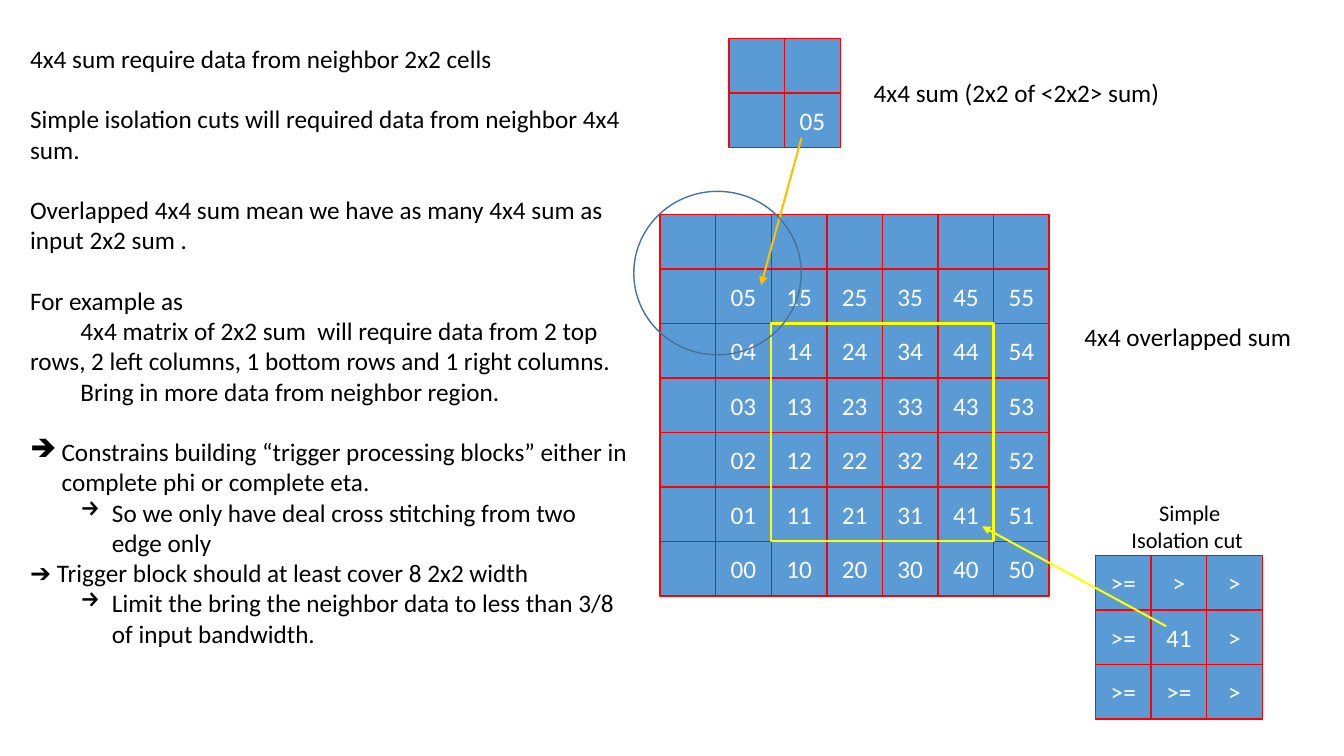
import pptx
import pptx.dml.color
import pptx.enum.shapes
import pptx.enum.text
import pptx.oxml
import pptx.oxml.ns
import pptx.util

Pt = pptx.util.Pt
MSO_SHAPE = pptx.enum.shapes.MSO_SHAPE
PP_ALIGN = pptx.enum.text.PP_ALIGN
MSO_ANCHOR = pptx.enum.text.MSO_ANCHOR

COLORS = {"cell": "5B9BD5", "grid": "FF0000", "white": "FFFFFF", "text": "000000",
          "block": "FFFF00", "sum_arrow": "FFC000", "circle": "43739E"}
FONT = "Calibri"
CELL_WIDTH, CELL_HEIGHT = 39.7, 38.93
LINE_HEIGHT = 21.6

# The overlapped grid has an empty first column and an empty top row.
overlapped_sums = [[""] * 7] + [
    [""] + [f"{column}{row}" for column in range(6)] for row in range(5, -1, -1)]
OVERLAPPED_LEFT, OVERLAPPED_TOP = 471.5, 153.2

# left, top, rows of cell texts
grids = [
    (OVERLAPPED_LEFT, OVERLAPPED_TOP, overlapped_sums),
    (520.8, 27.4, [["", ""], ["", "05"]]),
    (782.5, 396.8, [[">=", ">", ">"], [">=", "41", ">"], [">=", ">=", ">"]]),
]

# start, end, colour
arrows = [
    ((572.5, 98.6), (543.6, 203.6), "sum_arrow"),
    ((833, 447.3), (701.5, 376), "block"),
]

# left, top, width, height, size, alignment, lines
labels = [
    (617, 51.8, 221, 29, 18, PP_ALIGN.LEFT, ["4x4 sum (2x2 of <2x2> sum)"]),
    (767.5, 226.3, 164, 29, 18, PP_ALIGN.LEFT, ["4x4 overlapped sum"]),
    (800.5, 352.8, 98.6, 46, 16, PP_ALIGN.CENTER, ["Simple", "Isolation cut "]),
]

# text, gap before, level, bullet, left margin
notes = [
    ("4x4 sum require data from neighbor 2x2 cells", False, 0, None, 0),
    ("Simple isolation cuts will required data from neighbor 4x4 sum.", True, 0, None, 0),
    ("Overlapped 4x4 sum mean we have as many 4x4 sum as input 2x2 sum .",
     True, 0, None, 0),
    ("For example as", True, 0, None, 0),
    ("\t4x4 matrix of 2x2 sum  will require data from 2 top rows, 2 left columns, "
     "1 bottom rows and 1 right columns.", False, 0, None, 0),
    ("\tBring in more data from neighbor region.", False, 0, None, 0),
    ("Constrains building “trigger processing blocks” either in complete phi or "
     "complete eta.", True, 0, "➔", 22.5),
    ("So we only have deal cross stitching from two edge only", False, 1, "→", 58.5),
    ("➔ Trigger block should at least cover 8 2x2 width", False, 0, None, 0),
    ("Limit the bring the neighbor data to less than 3/8 of input bandwidth.",
     False, 1, "→", 58.5),
]


def rgb(name):
    return pptx.dml.color.RGBColor.from_string(COLORS[name])


def format_runs(paragraph, size, color):
    for run in paragraph.runs:
        run.font.name = FONT
        run.font.size = Pt(size)
        run.font.color.rgb = rgb(color)


def add_outline(slide, kind, box, line_color, line_width, fill=None):
    shape = slide.shapes.add_shape(kind, *map(Pt, box))
    shape.shadow.inherit = False
    if fill:
        shape.fill.solid()
        shape.fill.fore_color.rgb = rgb(fill)
    else:
        shape.fill.background()
    shape.line.color.rgb = rgb(line_color)
    shape.line.width = Pt(line_width)
    return shape


def add_grid(slide, left, top, rows):
    for row_index, row in enumerate(rows):
        for column_index, text in enumerate(row):
            box = (left + column_index * CELL_WIDTH, top + row_index * CELL_HEIGHT,
                   CELL_WIDTH, CELL_HEIGHT)
            cell = add_outline(slide, MSO_SHAPE.RECTANGLE, box, "grid", 1, "cell")
            if text:
                frame = cell.text_frame
                frame.text = text
                frame.vertical_anchor = MSO_ANCHOR.MIDDLE
                frame.paragraphs[0].alignment = PP_ALIGN.CENTER
                format_runs(frame.paragraphs[0], 18, "white")


def add_arrow(slide, start, end, color):
    arrow = slide.shapes.add_connector(
        pptx.enum.shapes.MSO_CONNECTOR.STRAIGHT, *map(Pt, start + end))
    arrow.line.color.rgb = rgb(color)
    arrow.line.width = Pt(1.5)
    head = pptx.oxml.parse_xml(
        f'<a:tailEnd {pptx.oxml.ns.nsdecls("a")} type="triangle"/>')
    arrow.line._get_or_add_ln().append(head)
    arrow._element.spPr.append(
        pptx.oxml.parse_xml(f'<a:effectLst {pptx.oxml.ns.nsdecls("a")}/>'))


def add_label(slide, left, top, width, height, size, alignment, lines):
    frame = slide.shapes.add_textbox(*map(Pt, (left, top, width, height))).text_frame
    frame.word_wrap = False
    frame.text = "\n".join(lines)
    for paragraph in frame.paragraphs:
        paragraph.alignment = alignment
        format_runs(paragraph, size, "text")


def set_bullet(paragraph, character, margin):
    properties = paragraph._p.get_or_add_pPr()
    properties.set("marL", str(Pt(margin)))
    properties.set("indent", str(-Pt(22.5)))
    properties.append(pptx.oxml.parse_xml(
        f'<a:buChar {pptx.oxml.ns.nsdecls("a")} char="{character}"/>'))


def add_notes_column(slide):
    frame = slide.shapes.add_textbox(*map(Pt, (14.4, 27.4, 442.8, 465))).text_frame
    frame.word_wrap = True
    frame.text = "\n".join(note[0] for note in notes)
    for paragraph, (_, gap, level, bullet, margin) in zip(frame.paragraphs, notes):
        paragraph.level = level
        paragraph.space_before = Pt(LINE_HEIGHT if gap else 0)
        if bullet:
            set_bullet(paragraph, bullet, margin)
        format_runs(paragraph, 18, "text")


def main():
    presentation = pptx.Presentation()
    presentation.slide_width, presentation.slide_height = Pt(960), Pt(540)
    slide = presentation.slides.add_slide(presentation.slide_layouts[6])
    for grid in grids:
        add_grid(slide, *grid)
    block = (OVERLAPPED_LEFT + 2 * CELL_WIDTH, OVERLAPPED_TOP + 2 * CELL_HEIGHT,
             4 * CELL_WIDTH, 4 * CELL_HEIGHT)
    add_outline(slide, MSO_SHAPE.RECTANGLE, block, "block", 1.5)
    for arrow in arrows:
        add_arrow(slide, *arrow)
    add_outline(slide, MSO_SHAPE.OVAL, (452.7, 136.7, 119.6, 116.8), "circle", 1)
    for label in labels:
        add_label(slide, *label)
    add_notes_column(slide)
    presentation.save("out.pptx")


if __name__ == "__main__":
    main()
